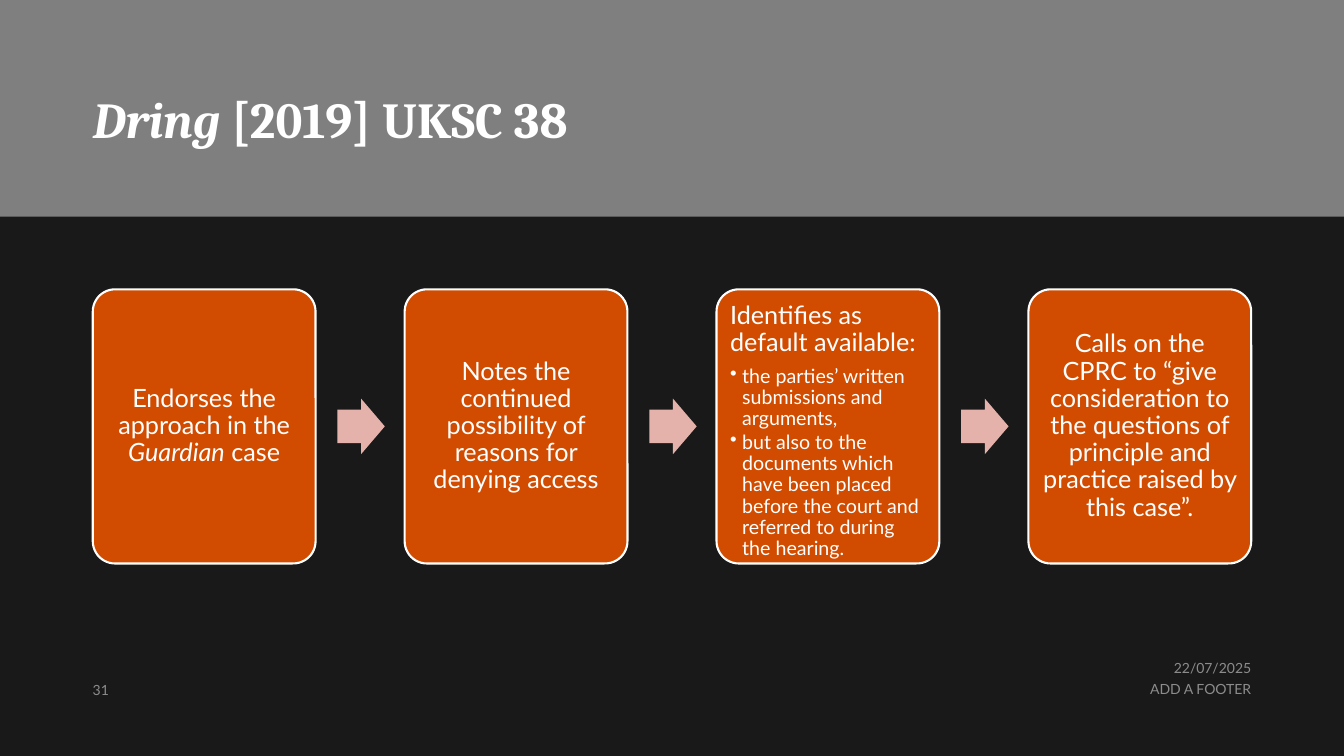
from lxml.etree import SubElement
from pptx import Presentation
from pptx.dml.color import RGBColor
from pptx.enum.shapes import MSO_SHAPE as Shape
from pptx.enum.text import MSO_ANCHOR as Anchor, MSO_AUTO_SIZE as AutoSize, PP_ALIGN as Align
from pptx.oxml.ns import qn
from pptx.util import Inches, Pt

WIDTH, HEIGHT = 13.33, 7.5
MARGIN, CONTENT_WIDTH = 0.92, 11.49
CARD_TOP, CARD_WIDTH, CARD_HEIGHT = 2.87, 2.21, 2.72
ARROW_WIDTH, ARROW_HEIGHT = 0.47, 0.55
TITLE_BAND, CONTENT_BAND = "7F7F7F", "191919"
CARD, ARROW, WHITE, FOOTER = "D14C00", "E5B2AB", "FFFFFF", "8C8C8C"

# Each step holds a statement, with *italics* marked, and its bullet points
STEPS = [
    ("Endorses the approach in the *Guardian* case", []),
    ("Notes the continued possibility of reasons for denying access", []),
    ("Identifies as default available:", [
        "the parties’ written submissions and arguments,",
        "but also to the documents which have been placed before the court "
        "and referred to during the hearing.",
    ]),
    ("Calls on the CPRC to “give consideration to the questions of principle "
     "and practice raised by this case”.", []),
]


def paint(format_part, color):
    """Give a fill, or the fill of a line, one solid colour."""
    format_part.solid()
    format_part.fore_color.rgb = RGBColor.from_string(color)


def area(left, top, width, height):
    return [Inches(length) for length in (left, top, width, height)]


def set_frame(frame, inset=0, anchor=Anchor.TOP):
    frame.word_wrap = True
    frame.auto_size = AutoSize.NONE
    frame.vertical_anchor = anchor
    frame.margin_left = frame.margin_right = Inches(inset)
    frame.margin_top = frame.margin_bottom = Inches(inset)


def write(paragraph, marked_text, size, color=WHITE, font="Lato", bold=False,
          align=Align.LEFT, after=0, spacing=0.9):
    """Fill a paragraph; parts between asterisks become italic."""
    paragraph.alignment = align
    paragraph.line_spacing = spacing
    paragraph.space_before, paragraph.space_after = Pt(0), Pt(after)
    for index, part in enumerate(marked_text.split("*")):
        if part:
            run = paragraph.add_run()
            run.text = part
            run.font.name, run.font.size = font, Pt(size)
            run.font.bold, run.font.italic = bold, index % 2 == 1
            paint(run.font.fill, color)


def add_bullet(paragraph, indent=0.12):
    properties = paragraph._p.get_or_add_pPr()
    properties.set("marL", str(Inches(indent)))
    properties.set("indent", str(-Inches(indent)))
    SubElement(properties, qn("a:buChar")).set("char", "•")


def add_block(slide, kind, place, color):
    block = slide.shapes.add_shape(kind, *area(*place))
    block.shadow.inherit = False
    paint(block.fill, color)
    block.line.fill.background()
    return block


def add_card(slide, left, statement, points):
    card = add_block(slide, Shape.ROUNDED_RECTANGLE,
                     (left, CARD_TOP, CARD_WIDTH, CARD_HEIGHT), CARD)
    card.adjustments[0] = 0.1
    paint(card.line.fill, WHITE)
    card.line.width = Pt(1.5)
    frame = card.text_frame
    set_frame(frame, 0.07, Anchor.TOP if points else Anchor.MIDDLE)
    write(frame.paragraphs[0], statement, 18, after=6.3,
          align=Align.LEFT if points else Align.CENTER)
    for point in points:
        paragraph = frame.add_paragraph()
        write(paragraph, point, 14, after=2.1)
        add_bullet(paragraph)


def add_arrow(slide, center):
    top = CARD_TOP + (CARD_HEIGHT - ARROW_HEIGHT) / 2
    arrow = add_block(slide, Shape.RIGHT_ARROW,
                      (center - ARROW_WIDTH / 2, top, ARROW_WIDTH, ARROW_HEIGHT), ARROW)
    arrow.adjustments[0] = 0.6


def add_process(slide):
    pitch = (CONTENT_WIDTH - CARD_WIDTH) / (len(STEPS) - 1)
    for index, (statement, points) in enumerate(STEPS):
        left = MARGIN + index * pitch
        add_card(slide, left, statement, points)
        if index < len(STEPS) - 1:
            add_arrow(slide, left + (CARD_WIDTH + pitch) / 2 + 0.01)


def add_footer(slide, text, place, align, anchor=Anchor.TOP, spacing=1.0):
    frame = slide.shapes.add_textbox(*area(*place)).text_frame
    set_frame(frame, anchor=anchor)
    write(frame.paragraphs[0], text, 10, FOOTER, align=align, after=6, spacing=spacing)


def set_title(slide, text):
    title = slide.shapes.title
    title.left, title.top, title.width, title.height = area(MARGIN, 0.88, CONTENT_WIDTH, 0.6)
    set_frame(title.text_frame, anchor=Anchor.BOTTOM)
    write(title.text_frame.paragraphs[0], text, 36, font="Cambria", bold=True)


def main():
    deck = Presentation()
    deck.slide_width, deck.slide_height = Inches(WIDTH), Inches(HEIGHT)
    slide = deck.slides.add_slide(deck.slide_layouts[5])
    paint(slide.background.fill, TITLE_BAND)
    add_block(slide, Shape.RECTANGLE, (0, 2.15, WIDTH, HEIGHT - 2.15), CONTENT_BAND)
    set_title(slide, "*Dring* [2019] UKSC 38")
    add_process(slide)
    right = MARGIN + CONTENT_WIDTH
    add_footer(slide, "22/07/2025", (right - 3, 6.56, 3, 0.16), Align.RIGHT, spacing=0.9)
    add_footer(slide, "ADD A FOOTER", (right - 4.5, 6.75, 4.5, 0.21), Align.RIGHT)
    add_footer(slide, "31", (MARGIN, 6.73, 0.5, 0.2), Align.LEFT, Anchor.BOTTOM)
    deck.save("out.pptx")


if __name__ == "__main__":
    main()
